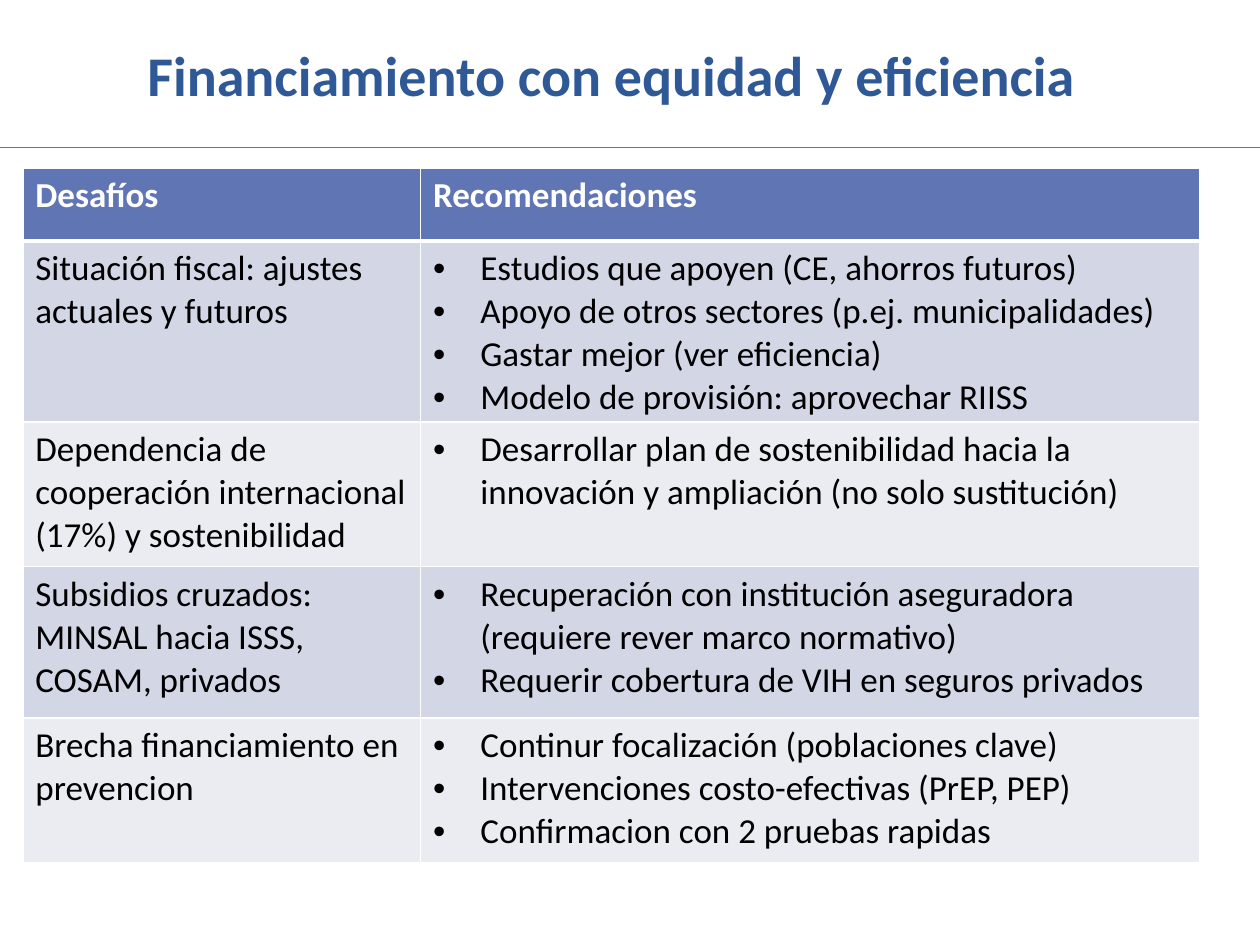
"""Build a slide with a table of financing challenges and recommendations."""
from dataclasses import dataclass

from lxml.etree import SubElement
from pptx import Presentation
from pptx.dml.color import RGBColor
from pptx.enum.shapes import MSO_CONNECTOR
from pptx.enum.text import MSO_AUTO_SIZE, PP_ALIGN
from pptx.oxml.ns import qn
from pptx.util import Pt


@dataclass(frozen=True)
class Theme:
    """Hold the colours, font and type sizes."""
    font: str = "Calibri"
    title_size: int = 32
    table_size: int = 20
    title: str = "2F5897"
    rule: str = "5C72B2"
    header: str = "6076B4"
    bands: tuple = ("D2D6E5", "EAECF2")
    white: str = "FFFFFF"
    text: str = "000000"


THEME = Theme()
COLUMN_WIDTHS = (227.3, 445.5)
ROW_HEIGHTS = (41.8, 103, 82.8, 86.4, 82.8)
BULLET_INDENT = 27
HEADINGS = ("Desafíos", "Recomendaciones")
CHALLENGES = (
    ("Situación fiscal: ajustes actuales y futuros", (
        "Estudios que apoyen (CE, ahorros futuros)",
        "Apoyo de otros sectores (p.ej. municipalidades)",
        "Gastar mejor (ver eficiencia)",
        "Modelo de provisión: aprovechar RIISS",
    )),
    ("Dependencia de cooperación internacional (17%) y sostenibilidad", (
        "Desarrollar plan de sostenibilidad hacia la innovación y ampliación (no solo sustitución)",
    )),
    ("Subsidios cruzados: MINSAL hacia ISSS, COSAM, privados", (
        "Recuperación con institución aseguradora (requiere rever marco normativo)",
        "Requerir cobertura de VIH en seguros privados",
    )),
    ("Brecha financiamiento en prevencion", (
        "Continur focalización (poblaciones clave)",
        "Intervenciones costo-efectivas (PrEP, PEP)",
        "Confirmacion con 2 pruebas rapidas",
    )),
)


def style_paragraph(para, size, color, bold):
    """Set the font of a whole paragraph."""
    font = para.font
    font.name, font.size, font.bold = THEME.font, Pt(size), bold
    font.color.rgb = RGBColor.from_string(color)


def add_title(slide, text):
    """Add the centred slide title."""
    box = slide.shapes.add_textbox(Pt(1.5), Pt(19.5), Pt(696), Pt(46))
    frame = box.text_frame
    frame.word_wrap = True
    frame.auto_size = MSO_AUTO_SIZE.SHAPE_TO_FIT_TEXT
    para = frame.paragraphs[0]
    para.text = text
    para.alignment = PP_ALIGN.CENTER
    style_paragraph(para, THEME.title_size, THEME.title, True)


def add_rule(slide):
    """Add the line below the title."""
    rule = slide.shapes.add_connector(MSO_CONNECTOR.STRAIGHT, Pt(-2), Pt(84.2), Pt(722), Pt(84.2))
    rule.line.color.rgb = RGBColor.from_string(THEME.rule)
    rule.line.width = Pt(0.75)
    SubElement(rule._element.spPr, qn("a:effectLst"))


def add_bullet(para):
    """Give a paragraph a hanging bullet."""
    properties = para._p.get_or_add_pPr()
    properties.set("marL", str(Pt(BULLET_INDENT)))
    properties.set("indent", str(-Pt(BULLET_INDENT)))
    SubElement(properties, qn("a:buFont"), typeface="Arial")
    SubElement(properties, qn("a:buChar"), char="•")


def set_borders(cell, top, bottom):
    """Draw white borders round a cell."""
    properties = cell._tc.get_or_add_tcPr()
    for side, width in (("L", 1), ("R", 1), ("T", top), ("B", bottom)):
        line = SubElement(properties, qn(f"a:ln{side}"), w=str(Pt(width)))
        fill = SubElement(line, qn("a:solidFill"))
        SubElement(fill, qn("a:srgbClr"), val=THEME.white)


def fill_cell(cell, lines, row, bulleted):
    """Write and style one table cell."""
    is_header = row == 0
    set_borders(cell, 3 if row == 1 else 1, 3 if is_header else 1)
    background = THEME.header if is_header else THEME.bands[(row - 1) % 2]
    cell.fill.solid()
    cell.fill.fore_color.rgb = RGBColor.from_string(background)
    cell.text_frame.text = "\n".join(lines)
    for para in cell.text_frame.paragraphs:
        style_paragraph(para, THEME.table_size, THEME.white if is_header else THEME.text, is_header)
        if bulleted:
            add_bullet(para)


def add_challenge_table(slide):
    """Add the table of challenges and recommendations."""
    frame = slide.shapes.add_table(
        len(ROW_HEIGHTS), len(COLUMN_WIDTHS), Pt(13), Pt(96),
        Pt(sum(COLUMN_WIDTHS)), Pt(sum(ROW_HEIGHTS)))
    table = frame.table
    for column, width in zip(table.columns, COLUMN_WIDTHS):
        column.width = Pt(width)
    for row, height in zip(table.rows, ROW_HEIGHTS):
        row.height = Pt(height)
    for column, heading in enumerate(HEADINGS):
        fill_cell(table.cell(0, column), (heading,), 0, False)
    for row, (challenge, recommendations) in enumerate(CHALLENGES, start=1):
        fill_cell(table.cell(row, 0), (challenge,), row, False)
        fill_cell(table.cell(row, 1), recommendations, row, True)


def main():
    """Build and save the deck."""
    deck = Presentation()
    deck.slide_width, deck.slide_height = Pt(720), Pt(540)
    page = deck.slides.add_slide(deck.slide_layouts[6])
    add_title(page, "Financiamiento con equidad y eficiencia")
    add_rule(page)
    add_challenge_table(page)
    deck.save("out.pptx")


if __name__ == "__main__":
    main()
